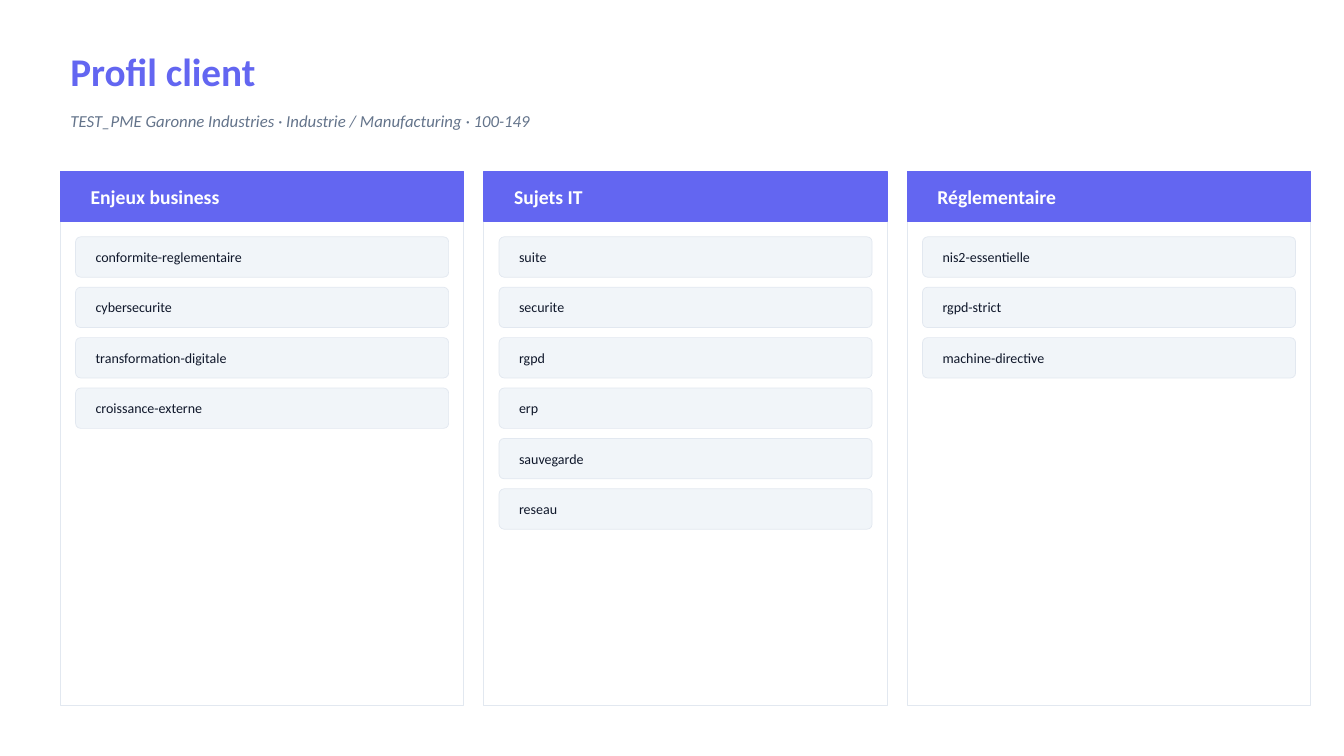
"""Build the client profile slide with three columns of topic tags."""

from dataclasses import dataclass

from pptx import Presentation
from pptx.dml.color import RGBColor
from pptx.enum.shapes import MSO_SHAPE
from pptx.enum.text import MSO_ANCHOR
from pptx.shapes.autoshape import Shape
from pptx.slide import Slide
from pptx.util import Inches, Pt

RECTANGLE = MSO_SHAPE.RECTANGLE
ROUNDED_RECTANGLE = MSO_SHAPE.ROUNDED_RECTANGLE
MIDDLE = MSO_ANCHOR.MIDDLE

INDIGO = RGBColor(0x63, 0x66, 0xF1)
SLATE = RGBColor(0x64, 0x74, 0x8B)
INK = RGBColor(0x0F, 0x17, 0x2A)
BORDER = RGBColor(0xE2, 0xE8, 0xF0)
TAG_FILL = RGBColor(0xF1, 0xF5, 0xF9)
WHITE = RGBColor(0xFF, 0xFF, 0xFF)

FONT = "Calibri"
MARGIN = 0.6
COLUMN_TOP = 1.7
COLUMN_WIDTH = 4
COLUMN_HEIGHT = 5.3
COLUMN_STEP = 4.2
HEADER_HEIGHT = 0.5
TAG_INSET = 0.15
TAG_TOP = 2.35
TAG_HEIGHT = 0.4
TAG_STEP = 0.5


@dataclass(frozen=True)
class Box:
    left: float
    top: float
    width: float
    height: float

    def inset(self, horizontal: float, vertical: float = 0) -> "Box":
        return Box(
            self.left + horizontal,
            self.top + vertical,
            self.width - 2 * horizontal,
            self.height - 2 * vertical,
        )

    def lengths(self) -> tuple[Inches, Inches, Inches, Inches]:
        return Inches(self.left), Inches(self.top), Inches(self.width), Inches(self.height)


@dataclass(frozen=True)
class TextStyle:
    size: float
    color: RGBColor
    bold: bool = False
    italic: bool = False


@dataclass(frozen=True)
class Column:
    heading: str
    tags: tuple[str, ...]


TITLE_STYLE = TextStyle(28, INDIGO, bold=True)
SUBTITLE_STYLE = TextStyle(12, SLATE, italic=True)
HEADING_STYLE = TextStyle(14, WHITE, bold=True)
TAG_STYLE = TextStyle(10, INK)

COLUMNS = (
    Column(
        "Enjeux business",
        ("conformite-reglementaire", "cybersecurite", "transformation-digitale", "croissance-externe"),
    ),
    Column("Sujets IT", ("suite", "securite", "rgpd", "erp", "sauvegarde", "reseau")),
    Column("Réglementaire", ("nis2-essentielle", "rgpd-strict", "machine-directive")),
)


def add_text(slide: Slide, box: Box, text: str, style: TextStyle) -> None:
    frame = slide.shapes.add_textbox(*box.lengths()).text_frame
    frame.word_wrap = True
    frame.vertical_anchor = MIDDLE
    run = frame.paragraphs[0].add_run()
    run.text = text
    run.font.name = FONT
    run.font.size = Pt(style.size)
    run.font.color.rgb = style.color
    run.font.bold = style.bold
    run.font.italic = style.italic


def add_panel(
    slide: Slide, kind: MSO_SHAPE, box: Box, fill: RGBColor, line: RGBColor, line_width: float
) -> Shape:
    shape = slide.shapes.add_shape(kind, *box.lengths())
    shape.shadow.inherit = False
    shape.fill.solid()
    shape.fill.fore_color.rgb = fill
    shape.line.color.rgb = line
    shape.line.width = Pt(line_width)
    return shape


def add_tag(slide: Slide, box: Box, text: str) -> None:
    shape = add_panel(slide, ROUNDED_RECTANGLE, box, TAG_FILL, BORDER, 0.5)
    shape.adjustments[0] = 0.125
    add_text(slide, box.inset(0.1), text, TAG_STYLE)


def add_column(slide: Slide, left: float, column: Column) -> None:
    body = Box(left, COLUMN_TOP, COLUMN_WIDTH, COLUMN_HEIGHT)
    header = Box(left, COLUMN_TOP, COLUMN_WIDTH, HEADER_HEIGHT)
    add_panel(slide, RECTANGLE, body, WHITE, BORDER, 0.75)
    add_panel(slide, RECTANGLE, header, INDIGO, INDIGO, 1)
    add_text(slide, header.inset(0.2, 0.05), column.heading, HEADING_STYLE)
    for row, tag in enumerate(column.tags):
        tag_box = Box(left, TAG_TOP + row * TAG_STEP, COLUMN_WIDTH, TAG_HEIGHT)
        add_tag(slide, tag_box.inset(TAG_INSET), tag)


def main() -> None:
    presentation = Presentation()
    presentation.slide_width = Inches(13.33)
    presentation.slide_height = Inches(7.5)
    slide = presentation.slides.add_slide(presentation.slide_layouts[6])
    slide.background.fill.solid()
    slide.background.fill.fore_color.rgb = WHITE

    add_text(slide, Box(MARGIN, 0.4, 12, 0.6), "Profil client", TITLE_STYLE)
    add_text(
        slide,
        Box(MARGIN, 1, 12, 0.4),
        "TEST_PME Garonne Industries · Industrie / Manufacturing · 100-149",
        SUBTITLE_STYLE,
    )
    for index, column in enumerate(COLUMNS):
        add_column(slide, MARGIN + index * COLUMN_STEP, column)

    presentation.save("out.pptx")


if __name__ == "__main__":
    main()
